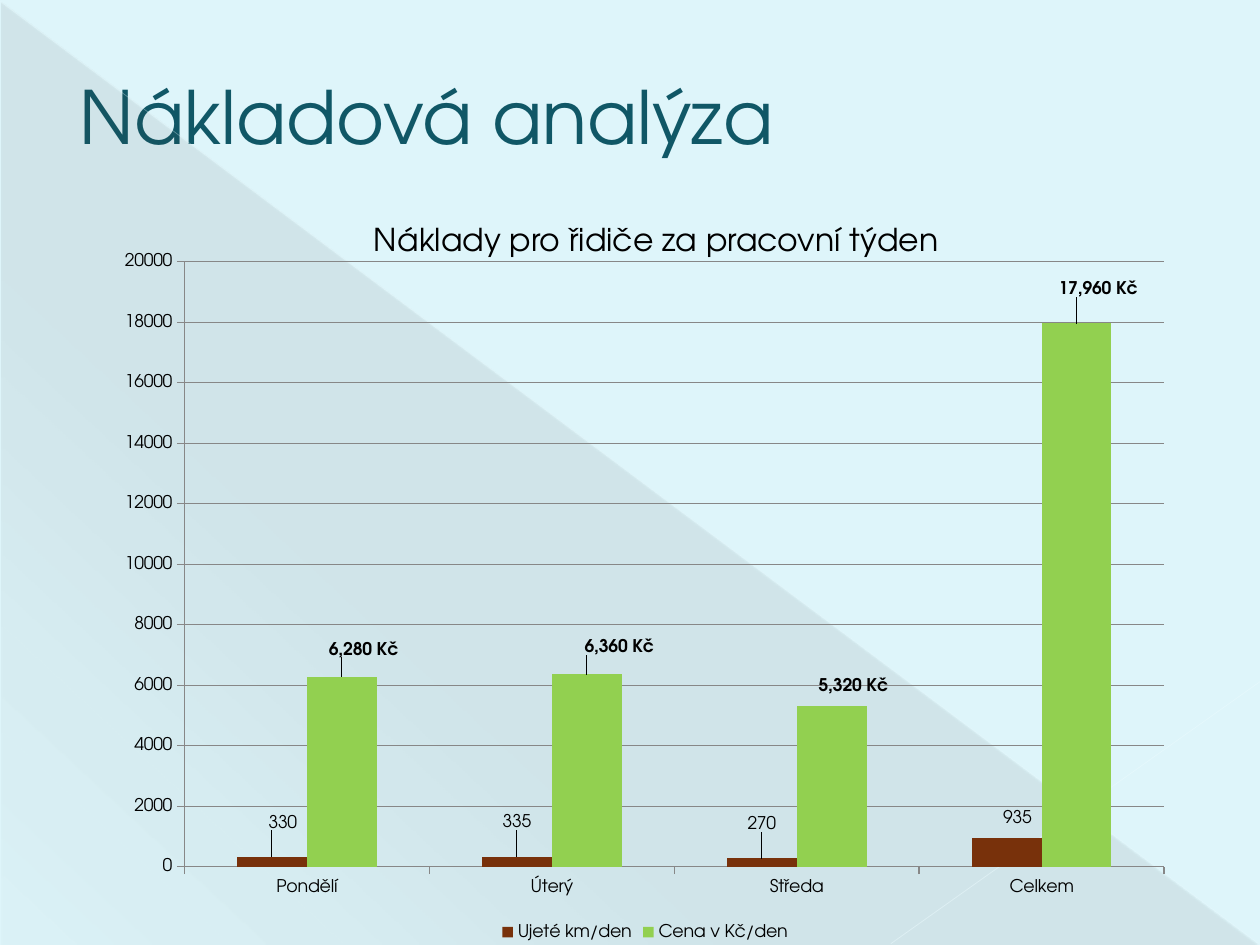
"""Build the cost analysis slide with a clustered column chart."""
from lxml import etree
from pptx import Presentation
from pptx.chart.data import CategoryChartData
from pptx.dml.color import RGBColor
from pptx.enum import chart as charts, shapes, text
from pptx.oxml import parse_xml
from pptx.oxml.ns import nsdecls, qn
from pptx.util import Inches, Pt

FONT = "TeX Gyre Adventor"
BACKGROUND = RGBColor(0xDE, 0xF5, 0xFA)
TITLE = RGBColor(0x10, 0x57, 0x66)
BLACK = RGBColor(0, 0, 0)
GRAY = RGBColor(0x87, 0x87, 0x87)
BROWN = RGBColor(0x78, 0x31, 0x0B)
GREEN = RGBColor(0x92, 0xD0, 0x50)
SHADE = "464646"
PRICE_FORMAT = '#,##0\\ "Kč"'


def set_font(font, size, color, bold=False):
    formats = {"name": FONT, "size": Pt(size), "bold": bold}
    for name, value in formats.items():
        setattr(font, name, value)
    font.color.rgb = color


def add_layout(parent, index, target, **values):
    layout = parse_xml(f"<c:layout {nsdecls('c')}><c:manualLayout/></c:layout>")
    if target:
        etree.SubElement(layout[0], qn("c:layoutTarget")).set("val", target)
        for mode in ("xMode", "yMode"):
            etree.SubElement(layout[0], qn(f"c:{mode}")).set("val", "edge")
    for name, value in values.items():
        etree.SubElement(layout[0], qn(f"c:{name}")).set("val", str(value))
    for old in parent.findall(qn("c:layout")):
        parent.remove(old)
    parent.insert(index, layout)


presentation = Presentation()
presentation.slide_width = Inches(10)
presentation.slide_height = Inches(7.5)
slide = presentation.slides.add_slide(presentation.slide_layouts[5])
slide.background.fill.solid()
slide.background.fill.fore_color.rgb = BACKGROUND

triangle = slide.shapes.add_shape(
    shapes.MSO_SHAPE.RIGHT_TRIANGLE, Inches(0.01), Inches(0.02), Inches(9.98), Inches(7.48))
triangle.shadow.inherit = False
triangle.line.fill.background()
stops = "".join(
    f'<a:gs pos="{position * 1000}"><a:srgbClr val="{SHADE}">'
    f'<a:alpha val="{alpha * 1000}"/></a:srgbClr></a:gs>'
    for position, alpha in ((0, 10), (70, 8), (100, 1)))
gradient = parse_xml(
    f"<a:gradFill {nsdecls('a')}><a:gsLst>{stops}</a:gsLst>"
    f'<a:lin ang="{133 * 60000}" scaled="0"/></a:gradFill>')
triangle._element.spPr.find(qn("a:prstGeom")).addnext(gradient)

diagonals = [
    ((0, 0.01, 9.99, 7.49), "EBFBFF", 0.39, 35),
    ((10, 5.41, 7.07, 7.49), "EDFCFF", 0.47, 45),
]
for ends, color, width, alpha in diagonals:
    line = slide.shapes.add_connector(
        shapes.MSO_CONNECTOR.STRAIGHT, *[Inches(end) for end in ends])
    line.line.width = Pt(width)
    line.line.color.rgb = RGBColor.from_string(color)
    color_element = line._element.spPr.find(".//" + qn("a:srgbClr"))
    etree.SubElement(color_element, qn("a:alpha")).set("val", str(alpha * 1000))
    etree.SubElement(line._element.spPr, qn("a:effectLst"))

title = slide.shapes.title
title_box = {"left": 0, "top": 0.29, "width": 10, "height": 1.25}
for name, value in title_box.items():
    setattr(title, name, Inches(value))
title.text_frame.text = "Nákladová analýza"
title.text_frame.auto_size = text.MSO_AUTO_SIZE.NONE
title.text_frame.vertical_anchor = text.MSO_ANCHOR.MIDDLE
paragraph = title.text_frame.paragraphs[0]
paragraph.alignment = text.PP_ALIGN.LEFT
paragraph._p.get_or_add_pPr().set("marL", str(Inches(0.53)))
run = paragraph.runs[0]
set_font(run.font, 42, TITLE)
run._r.get_or_add_rPr().insert(0, parse_xml(
    f'<a:ln {nsdecls("a")} w="{Pt(0.5)}"><a:solidFill>'
    '<a:srgbClr val="1F7084"/></a:solidFill></a:ln>'))

chart_data = CategoryChartData()
chart_data.categories = ["Pondělí", "Úterý", "Středa", "Celkem"]
chart_data.add_series("Ujeté km/den", [330, 335, 270, 935])
chart_data.add_series("Cena v Kč/den", [6280, 6360, 5320, 17960])
chart = slide.shapes.add_chart(
    charts.XL_CHART_TYPE.COLUMN_CLUSTERED,
    Inches(0.83), Inches(1.91), Inches(8.58), Inches(5.59), chart_data).chart
set_font(chart.font, 10, BLACK)
chart.has_title = False
chart.has_legend = True
chart.legend.position = charts.XL_LEGEND_POSITION.BOTTOM
chart.legend.include_in_layout = False
add_layout(chart._chartSpace.chart.plotArea, 0, "inner", x=0.074, y=0.03, w=0.906, h=0.859)

value_axis = chart.value_axis
value_axis.minimum_scale = 0
value_axis.maximum_scale = 20000
value_axis.major_unit = 2000
value_axis.has_major_gridlines = True
for axis in (chart.category_axis, value_axis):
    axis.major_tick_mark = charts.XL_TICK_MARK.OUTSIDE
    axis.minor_tick_mark = charts.XL_TICK_MARK.NONE
for part in (chart.category_axis, value_axis, value_axis.major_gridlines):
    part.format.line.color.rgb = GRAY
    part.format.line.width = Pt(0.75)

plot = chart.plots[0]
plot.gap_width = 150
plot.overlap = 0
plot.vary_by_categories = False
series_formats = [
    (BROWN, False, "General", [(0.01, -0.03), (0, -0.03), (0, -0.03), (0.01, -0.01)]),
    (GREEN, True, PRICE_FORMAT, [(0.02, -0.02), (0.03, -0.02), (0.02, -0.01), (0.02, -0.03)]),
]
for series, (color, bold, number_format, offsets) in zip(plot.series, series_formats):
    series.format.fill.solid()
    series.format.fill.fore_color.rgb = color
    labels = series.data_labels
    labels.show_value = True
    labels.number_format = number_format
    labels.number_format_is_linked = False
    set_font(labels.font, 10, BLACK, bold)
    for index in range(len(offsets)):
        label = series.points[index].data_label
        set_font(label.font, 10, BLACK, bold)
        label.position = charts.XL_LABEL_POSITION.OUTSIDE_END
    for element, (x, y) in zip(labels._element.findall(qn("c:dLbl")), offsets):
        add_layout(element, 1, None, x=x, y=y)
        label_format = etree.Element(qn("c:numFmt"), formatCode=number_format, sourceLinked="0")
        element.insert(2, label_format)

heading = slide.shapes.add_textbox(Inches(2.87), Inches(1.7), Inches(4.74), Inches(0.4))
heading.text_frame.word_wrap = False
heading.text_frame.auto_size = text.MSO_AUTO_SIZE.SHAPE_TO_FIT_TEXT
heading.text_frame.text = "Náklady pro řidiče za pracovní týden"
set_font(heading.text_frame.paragraphs[0].runs[0].font, 18, BLACK)

presentation.save("out.pptx")
